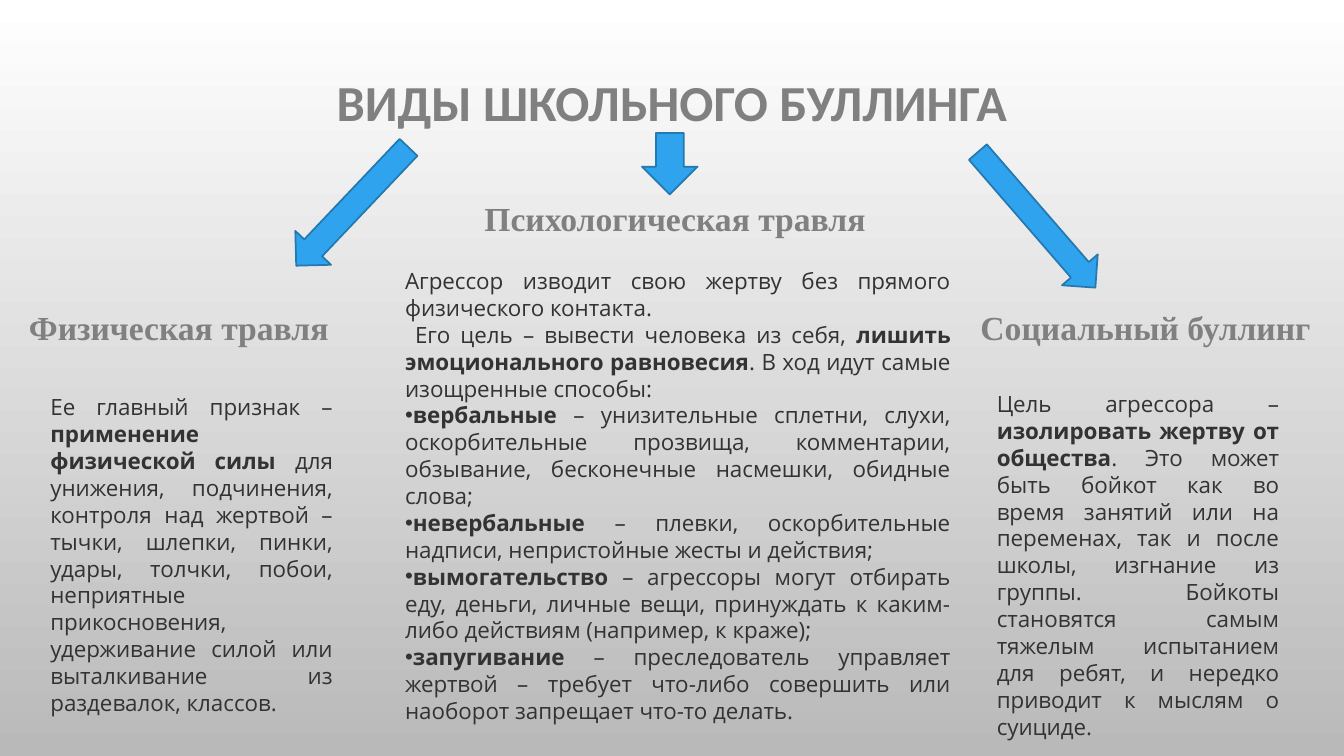
from lxml import etree
from pptx import Presentation
from pptx.dml.color import RGBColor
from pptx.enum.shapes import MSO_SHAPE as Shape
from pptx.enum.text import MSO_ANCHOR as Anchor, MSO_AUTO_SIZE as Fit, PP_ALIGN as Align
from pptx.oxml.ns import qn
from pptx.util import Cm, Pt

WHITE = RGBColor(0xFF, 0xFF, 0xFF)
SILVER = RGBColor(0xB9, 0xB9, 0xB9)
GRAY = RGBColor(0x80, 0x80, 0x80)
DARK = RGBColor(0x33, 0x33, 0x33)
BLUE = RGBColor(0x2F, 0xA3, 0xEE)
EDGE = RGBColor(0x23, 0x79, 0xB0)

TITLE = "ВИДЫ ШКОЛЬНОГО БУЛЛИНГА"
HEADS = [
    ("Физическая травля", 0.48, 7.54, 8.15),
    ("Психологическая травля", 11.96, 4.8, 10.21),
    ("Социальный буллинг", 24.46, 7.54, 8.92),
]
ARROWS = [
    (16.18, 3.35, 1.4, 1.55, 0),
    (8.26, 3.15, 1.24, 4.11, 43.5),
    (25.53, 3.28, 1.19, 4.52, 319.1),
]
FORCE = [
    "Ее главный признак – *применение физической силы *для унижения, "
    "подчинения, контроля над жертвой – тычки, шлепки, пинки, удары, толчки, "
    "побои, неприятные прикосновения, удерживание силой или выталкивание из "
    "раздевалок, классов.",
]
MIND = [
    "Агрессор изводит свою жертву без прямого физического контакта.",
    "Его цель – вывести человека из себя, *лишить эмоционального "
    "равновесия*. В ход идут самые изощренные способы:",
    "•*вербальные *– унизительные сплетни, слухи, оскорбительные прозвища, "
    "комментарии, обзывание, бесконечные насмешки, обидные слова;",
    "•*невербальные* – плевки, оскорбительные надписи, непристойные жесты "
    "и действия;",
    "•*вымогательство *– агрессоры могут отбирать еду, деньги, личные вещи, "
    "принуждать к каким-либо действиям (например, к краже);",
    "•*запугивание* – преследователь управляет жертвой – требует что-либо "
    "совершить или наоборот запрещает что-то делать.",
]
GROUP = [
    "Цель агрессора – *изолировать жертву от общества*. Это может быть бойкот "
    "как во время занятий или на переменах, так и после школы, изгнание из "
    "группы. Бойкоты становятся самым тяжелым испытанием для ребят, и нередко "
    "приводит к мыслям о суициде.",
]
BODIES = [
    (FORCE, 1.02, 9.79, 7.62, 8.48),
    (MIND, 9.96, 6.61, 14.25, 11.88),
    (GROUP, 24.87, 9.71, 7.62, 9.16),
]


class Deck:
    """Holds the style and the current slide, and draws each kind of element."""

    def __init__(self):
        self.file = Presentation()
        self.file.slide_width, self.file.slide_height = Cm(33.87), Cm(19.05)
        self.slide = self.file.slides.add_slide(self.file.slide_layouts[6])

    def shade(self, top, base):
        fill = self.slide.background.fill
        fill.gradient()
        fill.gradient_angle = 270
        for stop, color in zip(fill.gradient_stops, (top, base)):
            stop.color.rgb = color

    def frame(self, x, y, w, h, wrap=True):
        box = self.slide.shapes.add_textbox(Cm(x), Cm(y), Cm(w), Cm(h))
        box.text_frame.word_wrap = wrap
        return box.text_frame

    def style(self, run, name, size, color, bold):
        font = run.font
        font.name, font.size, font.bold = name, Pt(size), bold
        font.color.rgb = color

    def title(self, text, x, y, w, h):
        frame = self.frame(x, y, w, h)
        frame.vertical_anchor = Anchor.MIDDLE
        frame.text = text
        para = frame.paragraphs[0]
        para.alignment, para.line_spacing = Align.CENTER, 0.9
        self.style(para.runs[0], "Calibri", 36, GRAY, True)

    def head(self, text, x, y, w):
        frame = self.frame(x, y, w, 1.3, False)
        frame.auto_size = Fit.SHAPE_TO_FIT_TEXT
        frame.text = text
        para = frame.paragraphs[0]
        para.alignment, para.line_spacing = Align.JUSTIFY, 1.07
        self.style(para.runs[0], "Times New Roman", 24, GRAY, True)

    def body(self, texts, x, y, w, h):
        frame = self.frame(x, y, w, h)
        frame.auto_size = Fit.SHAPE_TO_FIT_TEXT
        for i, text in enumerate(texts):
            para = frame.add_paragraph() if i else frame.paragraphs[0]
            para.alignment = Align.JUSTIFY
            if text.startswith("•"):
                self.bullet(para)
            elif i:
                para._p.get_or_add_pPr().set("indent", str(Cm(0.25)))
            for j, part in enumerate(text.lstrip("•").split("*")):
                if part:
                    run = para.add_run()
                    run.text = part
                    self.style(run, "Open Sans", 16, DARK, j % 2 == 1)

    def bullet(self, para):
        props = para._p.get_or_add_pPr()
        props.set("marL", "0")
        props.set("indent", "0")
        etree.SubElement(props, qn("a:buFont")).set("typeface", "Arial")
        etree.SubElement(props, qn("a:buChar")).set("char", "•")

    def arrow(self, x, y, w, h, turn):
        shape = self.slide.shapes.add_shape(
            Shape.DOWN_ARROW, Cm(x), Cm(y), Cm(w), Cm(h))
        shape.rotation = turn
        shape.shadow.inherit = False
        shape.fill.solid()
        shape.fill.fore_color.rgb = BLUE
        shape.line.color.rgb = EDGE
        shape.line.width = Pt(1.25)


def main():
    deck = Deck()
    deck.shade(WHITE, SILVER)
    deck.title(TITLE, 4.55, 0.86, 24.77, 3.56)
    for item in BODIES:
        deck.body(*item)
    for item in ARROWS:
        deck.arrow(*item)
    for item in HEADS:
        deck.head(*item)
    deck.file.save("out.pptx")


if __name__ == "__main__":
    main()
